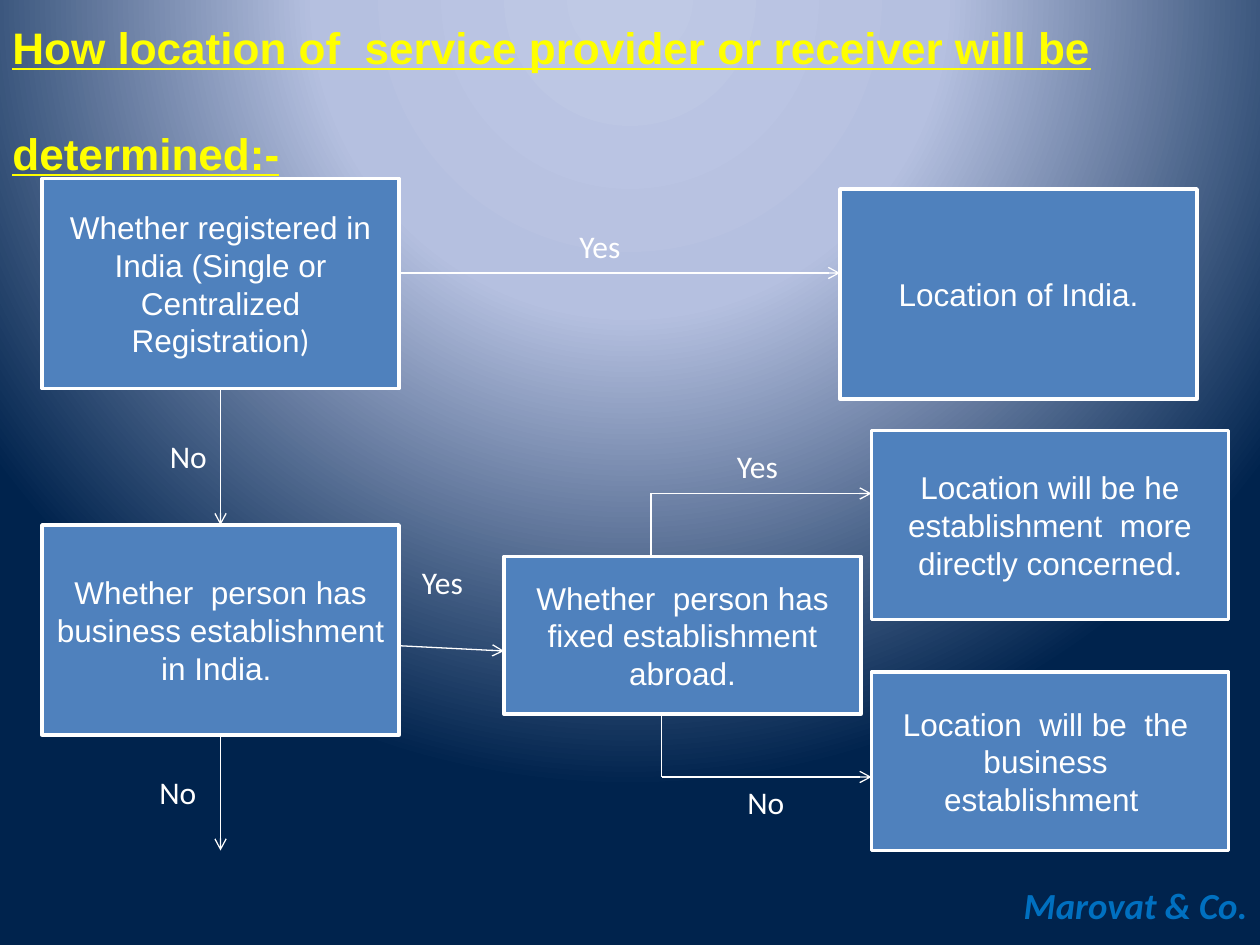
from lxml.etree import SubElement
from pptx import Presentation
from pptx.dml.color import RGBColor
from pptx.enum.shapes import MSO_CONNECTOR, MSO_SHAPE
from pptx.enum.text import MSO_ANCHOR, PP_ALIGN
from pptx.oxml.ns import qn
from pptx.util import Pt

COLORS = {"box": "4F81BD", "white": "FFFFFF", "title": "FFFF00", "footer": "0070C0"}
BACKGROUND_STOPS = [(0, "BFC9E5"), (40, "B5C0E0"), (100, "00234D")]
TITLE = "How location of  service provider or receiver will be determined:-"
FOOTER = "Marovat & Co."

# All boxes share one width: left, top, height, Arial text, closing Calibri text
BOX_WIDTH = 204
BOXES = [
    (24, 102, 120, "Whether registered in India (Single or Centralized Registration", ")"),
    (480, 108, 120, "Location of India.", ""),
    (24, 300, 120, "Whether  person has business establishment in India. ", ""),
    (288, 318, 90, "Whether  person has fixed establishment abroad.", ""),
    (498, 384, 102, "Location  will be  the  business  establishment  ", ""),
    (498, 246, 108, "Location will be he establishment  more directly concerned", "."),
]
# Points along each route; the last segment carries the arrowhead
ROUTES = [
    [(228, 156), (480, 156)],
    [(126, 222), (126, 300)],
    [(126, 420), (126, 486)],
    [(228, 369), (288, 372)],
    [(372, 318), (372, 282), (498, 282)],
    [(378, 408), (378, 444), (498, 444)],
]
LABELS = [
    ("Yes", 234, 318), ("Yes", 324, 126), ("Yes", 414, 252),
    ("No", 420, 444), ("No", 84, 438), ("No", 90, 246),
]
LABEL_WIDTHS = {"Yes": 38, "No": 36}

BOX_FONT = {"name": "Arial", "size": Pt(18)}
LABEL_FONT = {"name": "Calibri", "size": Pt(18)}
TITLE_FONT = {"name": "Arial", "size": Pt(25.2), "bold": True, "underline": True}
FOOTER_FONT = {"name": "Calibri", "size": Pt(21), "bold": True, "italic": True}


def color(name):
    return RGBColor.from_string(COLORS[name])


def add_span(para, text, font, color_name="white"):
    span = para.add_run()
    span.text = text
    for key, value in font.items():
        setattr(span.font, key, value)
    span.font.color.rgb = color(color_name)


def add_text(page, place, text, font, color_name="white", wrap=False):
    box = page.shapes.add_textbox(*map(Pt, place))
    box.text_frame.word_wrap = wrap
    add_span(box.text_frame.paragraphs[0], text, font, color_name)
    return box.text_frame


def paint_background(page):
    """Radial gradient centred above the slide."""
    page.background.fill.gradient()
    gradient = next(page.element.iter(qn("a:gradFill")))
    for child in list(gradient):
        gradient.remove(child)
    stops = SubElement(gradient, qn("a:gsLst"))
    for percent, value in BACKGROUND_STOPS:
        stop = SubElement(stops, qn("a:gs"), pos=str(percent * 1000))
        SubElement(stop, qn("a:srgbClr"), val=value)
    circle = SubElement(gradient, qn("a:path"), path="circle")
    SubElement(circle, qn("a:fillToRect"), l="50000", t="-80000", r="50000", b="180000")


def add_box(page, left, top, height, text, closing):
    box = page.shapes.add_shape(
        MSO_SHAPE.RECTANGLE, Pt(left), Pt(top), Pt(BOX_WIDTH), Pt(height))
    box.shadow.inherit = False
    box.fill.solid()
    box.fill.fore_color.rgb = color("box")
    box.line.color.rgb = color("white")
    box.line.width = Pt(2)
    box.text_frame.word_wrap = True
    box.text_frame.vertical_anchor = MSO_ANCHOR.MIDDLE
    para = box.text_frame.paragraphs[0]
    para.alignment = PP_ALIGN.CENTER
    add_span(para, text, BOX_FONT)
    if closing:
        add_span(para, closing, LABEL_FONT)


def add_route(page, points):
    for start, end in zip(points, points[1:]):
        line = page.shapes.add_connector(MSO_CONNECTOR.STRAIGHT, *map(Pt, start + end))
        line.line.color.rgb = color("white")
        line.line.width = Pt(0.75)
        SubElement(line.element.spPr, qn("a:effectLst"))
    SubElement(line.element.spPr.find(qn("a:ln")), qn("a:tailEnd"), type="arrow")


def main():
    deck = Presentation()
    deck.slide_width, deck.slide_height = Pt(720), Pt(540)
    page = deck.slides.add_slide(deck.slide_layouts[6])
    paint_background(page)

    footer = add_text(page, (576, 501, 144, 32), FOOTER, FOOTER_FONT, "footer")
    footer.paragraphs[0].alignment = PP_ALIGN.RIGHT

    # The deep bottom margin lifts the two title lines clear of the first box
    title = add_text(page, (0, 24, 720, 66), TITLE, TITLE_FONT, "title", wrap=True)
    title.vertical_anchor = MSO_ANCHOR.MIDDLE
    title.margin_bottom = Pt(34)
    title.paragraphs[0].line_spacing = 2.0

    for box in BOXES:
        add_box(page, *box)
    for points in ROUTES:
        add_route(page, points)
    for text, left, top in LABELS:
        add_text(page, (left, top, LABEL_WIDTHS[text], 29), text, LABEL_FONT)

    deck.save("out.pptx")


if __name__ == "__main__":
    main()
